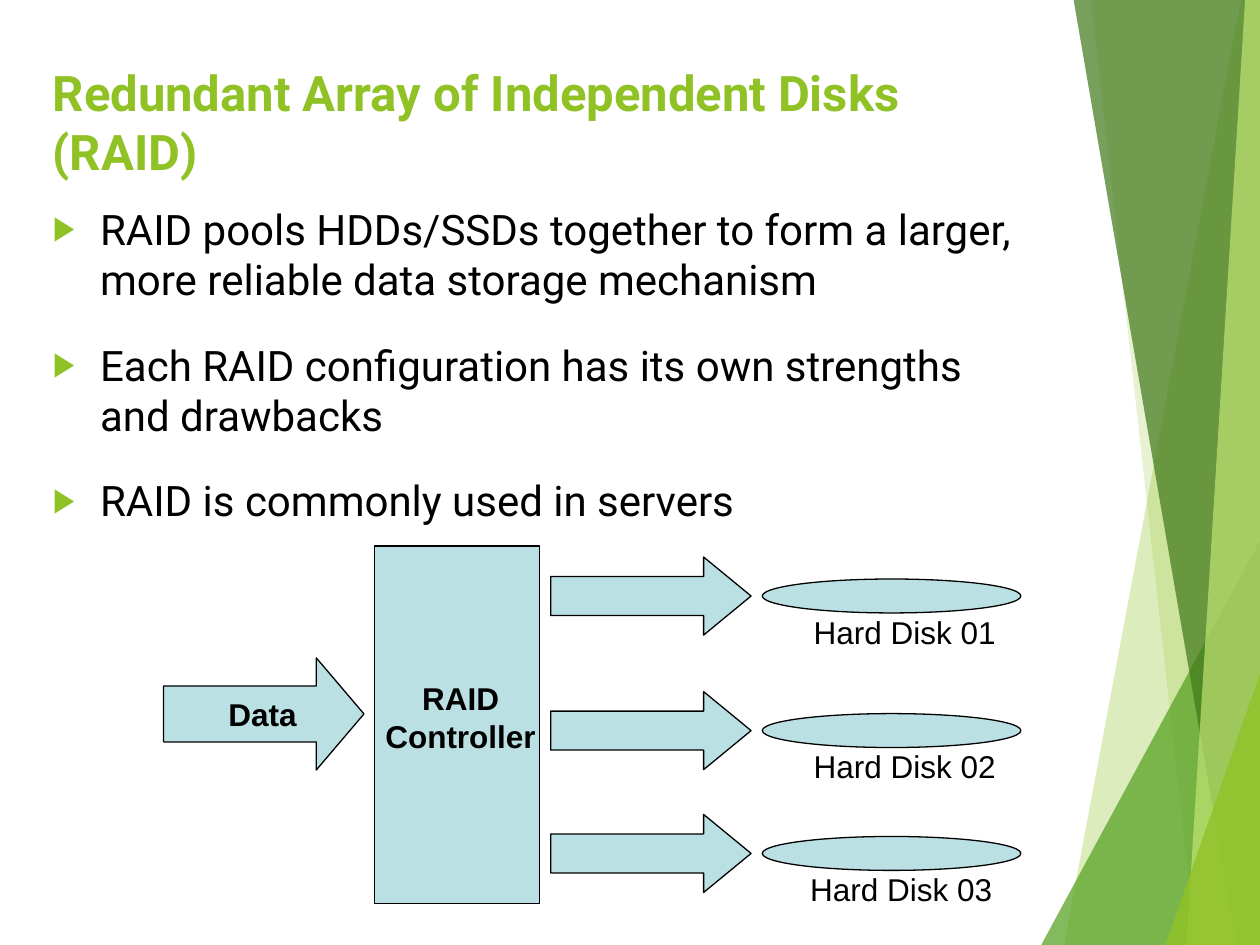
from dataclasses import dataclass

import lxml.etree
import pptx
import pptx.dml.color
import pptx.enum.shapes
import pptx.enum.text
import pptx.oxml.ns
import pptx.util

Pt = pptx.util.Pt
Shape = pptx.enum.shapes.MSO_SHAPE
Align = pptx.enum.text.PP_ALIGN
Anchor = pptx.enum.text.MSO_ANCHOR
qn = pptx.oxml.ns.qn


@dataclass(frozen=True)
class Theme:
    accent: str = "90C226"
    ink: str = "000000"
    diagram: str = "BBE0E3"
    green: str = "54A021"
    dark_green: str = "3F7819"
    pale_green: str = "C0E474"
    text_font: str = "Roboto"
    label_font: str = "Arial"
    title_size: int = 28
    body_size: int = 24
    label_size: int = 18
    outline: float = 0.75


THEME = Theme()

# Facets: colour, opacity in percent, corner points
FACETS = [
    (THEME.accent, 30, [(709, 0), (608, 540), (720, 540), (720, 0)]),
    (THEME.accent, 20, [(623.5, 0), (683.5, 540), (720, 540), (720, 0)]),
    (THEME.green, 72, [(595, 540), (720, 309), (720, 540)]),
    (THEME.dark_green, 70, [(613.5, 0), (706.5, 540), (720, 540), (720, 0)]),
    (THEME.pale_green, 70, [(711.5, 0), (678, 540), (720, 540), (720, 0)]),
    (THEME.accent, 80, [(666, 540), (720, 385), (720, 540)]),
]

BULLETS = [
    "RAID pools HDDs/SSDs together to form a larger, more reliable data storage mechanism",
    "Each RAID configuration has its own strengths and drawbacks",
    "RAID is commonly used in servers",
]

# Disks: label, vertical centre of the row, label width
DISKS = [
    ("Hard Disk 01", 340.6, 120),
    ("Hard Disk 02", 417.5, 120),
    ("Hard Disk 03", 487.7, 116),
]


def rgb(colour):
    return pptx.dml.color.RGBColor.from_string(colour)


def place(shape, left, top, width, height):
    shape.left, shape.top = Pt(left), Pt(top)
    shape.width, shape.height = Pt(width), Pt(height)


def add_bullet(paragraph, indent=27):
    properties = paragraph._p.get_or_add_pPr()
    properties.set("marL", str(Pt(indent)))
    properties.set("indent", str(Pt(-indent)))
    colour = lxml.etree.SubElement(properties, qn("a:buClr"))
    lxml.etree.SubElement(colour, qn("a:srgbClr"), val=THEME.accent)
    lxml.etree.SubElement(properties, qn("a:buSzPct"), val="80000")
    lxml.etree.SubElement(properties, qn("a:buFont"), typeface=THEME.label_font)
    lxml.etree.SubElement(properties, qn("a:buChar"), char="▶")


def write_text(shape, lines, *, font, size, colour=THEME.ink, bold=False,
               align=Align.LEFT, anchor=Anchor.TOP, gap=0, bullets=False, insets=None):
    frame = shape.text_frame
    frame.word_wrap = True
    frame.auto_size = pptx.enum.text.MSO_AUTO_SIZE.NONE
    frame.vertical_anchor = anchor
    if insets:
        (frame.margin_left, frame.margin_top,
         frame.margin_right, frame.margin_bottom) = map(Pt, insets)
    for index, line in enumerate(lines):
        paragraph = frame.paragraphs[0] if index == 0 else frame.add_paragraph()
        paragraph.space_before = Pt(gap if index else 0)
        if bullets:
            add_bullet(paragraph)
        paragraph.alignment = align
        run = paragraph.add_run()
        run.text = line
        run.font.name = font
        run.font.size = Pt(size)
        run.font.bold = bold
        run.font.color.rgb = rgb(colour)


def add_facet(slide, colour, opacity, points):
    corners = [(Pt(x), Pt(y)) for x, y in points]
    builder = slide.shapes.build_freeform(*corners[0])
    builder.add_line_segments(corners[1:], close=True)
    facet = builder.convert_to_shape()
    facet.shadow.inherit = False
    facet.line.fill.background()
    facet.fill.solid()
    facet.fill.fore_color.rgb = rgb(colour)
    colour_element = facet.element.spPr.find(".//" + qn("a:srgbClr"))
    lxml.etree.SubElement(colour_element, qn("a:alpha"), val=str(opacity * 1000))


def fill_placeholder(shape, box, lines, **text_format):
    # Bring the text in front of the facets
    shape.element.getparent().append(shape.element)
    place(shape, *box)
    write_text(shape, lines, font=THEME.text_font, **text_format)


def add_block(slide, kind, left, top, width, height, head=None):
    block = slide.shapes.add_shape(kind, Pt(left), Pt(top), Pt(width), Pt(height))
    block.shadow.inherit = False
    block.fill.solid()
    block.fill.fore_color.rgb = rgb(THEME.diagram)
    block.line.color.rgb = rgb(THEME.ink)
    block.line.width = Pt(THEME.outline)
    if head:
        block.adjustments[1] = head


def add_label(slide, lines, left, top, width, height, **text_format):
    label = slide.shapes.add_textbox(Pt(left), Pt(top), Pt(width), Pt(height))
    write_text(label, lines, font=THEME.label_font, size=THEME.label_size,
               align=Align.CENTER, insets=(3, 0, 3, 0), **text_format)


def add_diagram(slide):
    # Data flowing into the controller
    add_block(slide, Shape.RIGHT_ARROW, 93.5, 376, 114.5, 64, head=0.425)
    add_label(slide, ["Data"], 119.5, 395.5, 61, 25, bold=True, anchor=Anchor.MIDDLE)
    add_block(slide, Shape.RECTANGLE, 214, 312, 94.5, 204.5)
    add_label(slide, ["RAID", "Controller"], 209, 386, 108.5, 47,
              bold=True, anchor=Anchor.MIDDLE)

    # One arrow, disk and label per row
    arrow_height, disk_height = 44.6, 19.4
    for name, centre, label_width in DISKS:
        add_block(slide, Shape.RIGHT_ARROW, 314.7, centre - arrow_height / 2,
                  114.5, arrow_height, head=0.608)
        add_block(slide, Shape.OVAL, 435.6, centre - disk_height / 2, 147.8, disk_height)
        add_label(slide, [name], 457, centre + 9.6, label_width, 27)


def main():
    presentation = pptx.Presentation()
    presentation.slide_width, presentation.slide_height = Pt(720), Pt(540)
    slide = presentation.slides.add_slide(presentation.slide_layouts[1])

    # Decoration on the right
    for facet in FACETS:
        add_facet(slide, *facet)

    # Title and list
    fill_placeholder(slide.shapes.title, (23, 26.5, 572, 86),
                     ["Redundant Array of Independent Disks (RAID)"],
                     size=THEME.title_size, colour=THEME.accent, bold=True,
                     anchor=Anchor.MIDDLE)
    fill_placeholder(slide.placeholders[1], (23, 112.5, 572, 377), BULLETS,
                     size=THEME.body_size, gap=20, bullets=True)

    add_diagram(slide)
    presentation.save("out.pptx")


if __name__ == "__main__":
    main()
